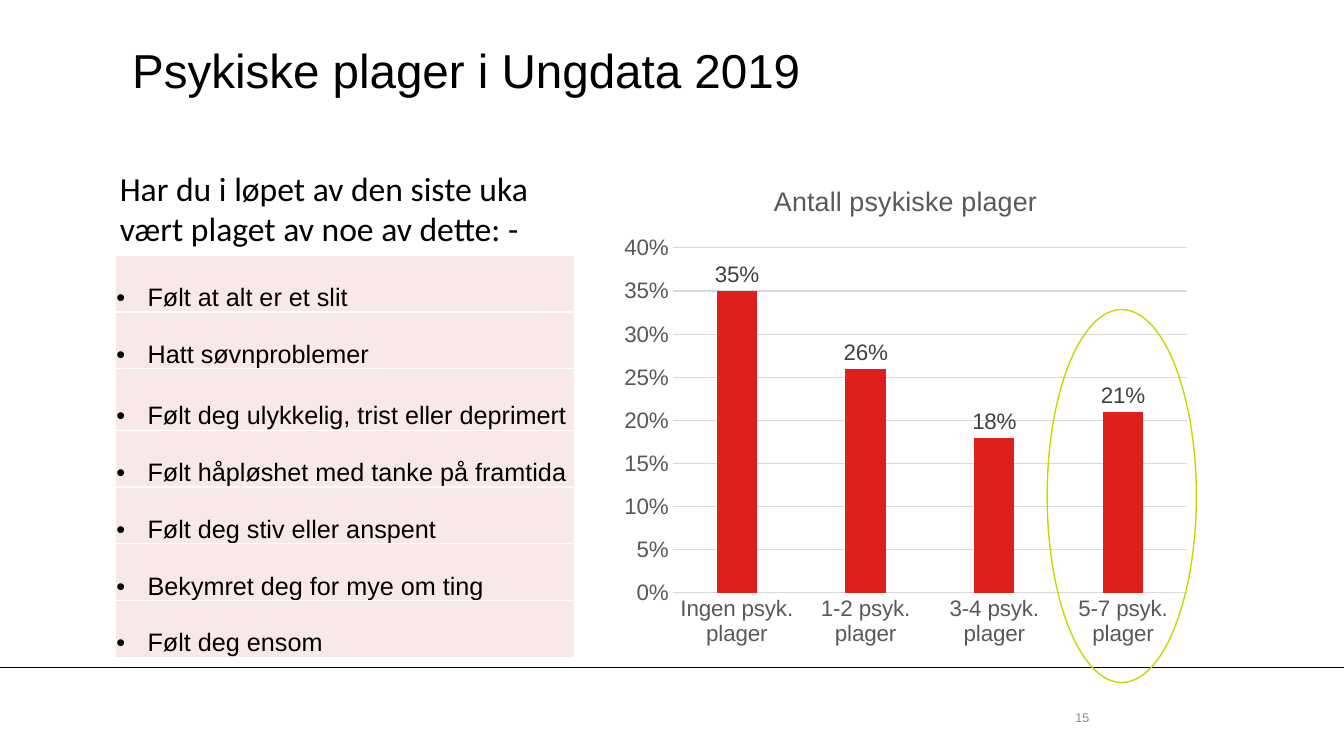
from dataclasses import dataclass

from lxml.etree import SubElement
from pptx import Presentation
from pptx.chart.data import CategoryChartData
from pptx.dml.color import RGBColor
from pptx.enum.chart import XL_CHART_TYPE as ChartType, XL_LABEL_POSITION as LabelPosition
from pptx.enum.chart import XL_TICK_MARK as TickMark
from pptx.enum.shapes import MSO_CONNECTOR as Connector, MSO_SHAPE as Shape
from pptx.enum.text import MSO_ANCHOR as Anchor
from pptx.oxml.ns import qn
from pptx.util import Cm, Pt


@dataclass(frozen=True)
class Theme:
    black: str = "000000"
    white: str = "FFFFFF"
    red: str = "DF1F1D"
    pink: str = "F9E8E8"
    lime: str = "CDD500"
    axis_text: str = "595959"
    label_text: str = "404040"
    grid: str = "D9D9D9"
    page_number: str = "8C8C8C"
    font: str = "Arial"
    question_font: str = "Calibri"
    title_size: float = 34
    question_size: float = 24
    list_size: float = 18
    chart_title_size: float = 19.2
    chart_size: float = 16
    page_number_size: float = 9


theme = Theme()


def style_font(font, size, color, name=theme.font):
    font.size = Pt(size)
    font.name = name
    font.bold = False
    font.color.rgb = RGBColor.from_string(color)


def add_text(box, text, size, color, name=theme.font, margins=None):
    """Add a wrapping text box; margins is (horizontal, vertical) in cm."""
    frame = slide.shapes.add_textbox(*map(Cm, box)).text_frame
    frame.word_wrap = True
    if margins:
        frame.margin_left = frame.margin_right = Cm(margins[0])
        frame.margin_top = frame.margin_bottom = Cm(margins[1])
        frame.vertical_anchor = Anchor.MIDDLE
    run = frame.paragraphs[0].add_run()
    run.text = text
    style_font(run.font, size, color, name)


presentation = Presentation()
presentation.slide_width, presentation.slide_height = Cm(33.87), Cm(19.05)
slide = presentation.slides.add_slide(presentation.slide_layouts[6])

# Footer rule, title, page number and question
footer_rule = slide.shapes.add_connector(Connector.STRAIGHT, 0, Cm(16.81), Cm(33.87), Cm(16.81))
footer_rule.line.color.rgb = RGBColor.from_string(theme.black)
footer_rule.line.width = Pt(0.75)
SubElement(footer_rule.element.spPr, qn("a:effectLst"))

add_text((3.33, 0.81, 28.19, 1.9), "Psykiske plager i Ungdata 2019",
         theme.title_size, theme.black, margins=(0, 0))
add_text((27.1, 17.58, 1.7, 1.02), "15", theme.page_number_size, theme.page_number, margins=(0, 0))
add_text((2.77, 4.11, 11.25, 2.31), "Har du i løpet av den siste uka vært plaget av noe av dette: -",
         theme.question_size, theme.black, theme.question_font)

# Table of complaints
complaints = [
    "Følt at alt er et slit",
    "Hatt søvnproblemer",
    "Følt deg ulykkelig, trist eller deprimert",
    "Følt håpløshet med tanke på framtida",
    "Følt deg stiv eller anspent",
    "Bekymret deg for mye om ting",
    "Følt deg ensom",
]
TALL_ROW = 2
table = slide.shapes.add_table(len(complaints), 1, Cm(2.9), Cm(6.43), Cm(11.58), Cm(10.11)).table
table.first_row = table.horz_banding = False
for index, complaint in enumerate(complaints):
    table.rows[index].height = Cm(1.55 if index == TALL_ROW else 1.43)
    cell = table.cell(index, 0)
    cell.margin_left = cell.margin_right = cell.margin_top = Cm(0.03)
    cell.margin_bottom = 0
    cell.vertical_anchor = Anchor.BOTTOM
    cell_properties = cell._tc.get_or_add_tcPr()
    for side in ("lnL", "lnR", "lnT", "lnB"):
        border = SubElement(cell_properties, qn(f"a:{side}"), w=str(Pt(1)))
        SubElement(SubElement(border, qn("a:solidFill")), qn("a:srgbClr"), val=theme.white)
    cell.fill.solid()
    cell.fill.fore_color.rgb = RGBColor.from_string(theme.pink)

    paragraph = cell.text_frame.paragraphs[0]
    paragraph_properties = paragraph._p.get_or_add_pPr()
    paragraph_properties.set("marL", str(Cm(0.79)))
    paragraph_properties.set("indent", str(Cm(-0.79)))
    SubElement(paragraph_properties, qn("a:buFont"), typeface=theme.font)
    SubElement(paragraph_properties, qn("a:buChar"), char="•")
    run = paragraph.add_run()
    run.text = complaint
    style_font(run.font, theme.list_size, theme.black)

# Column chart
chart_data = CategoryChartData(number_format="0%")
chart_data.categories = ["Ingen psyk. plager", "1-2 psyk. plager", "3-4 psyk. plager", "5-7 psyk. plager"]
chart_data.add_series("Antall psykiske plager", [0.35, 0.26, 0.18, 0.21])
chart = slide.shapes.add_chart(ChartType.COLUMN_CLUSTERED, Cm(15.44), Cm(4.11),
                               Cm(14.78), Cm(12.4), chart_data).chart
style_font(chart.font, theme.chart_size, theme.black)
chart.has_legend = False
chart.has_title = True
title_run = chart.chart_title.text_frame.paragraphs[0].add_run()
title_run.text = "Antall psykiske plager"
style_font(title_run.font, theme.chart_title_size, theme.axis_text)
chart.chart_title.include_in_layout = False

category_axis, value_axis = chart.category_axis, chart.value_axis
for axis in (category_axis, value_axis):
    axis.major_tick_mark = axis.minor_tick_mark = TickMark.NONE
    style_font(axis.tick_labels.font, theme.chart_size, theme.axis_text)
value_axis.minimum_scale, value_axis.maximum_scale, value_axis.major_unit = 0, 0.4, 0.05
value_axis.tick_labels.number_format = "0%"
value_axis.tick_labels.number_format_is_linked = False
value_axis.format.line.fill.background()
for line in (category_axis.format.line, value_axis.major_gridlines.format.line):
    line.color.rgb = RGBColor.from_string(theme.grid)
    line.width = Pt(0.75)

plot = chart.plots[0]
plot.gap_width, plot.overlap, plot.vary_by_categories = 219, -27, False
columns = plot.series[0]
columns.format.fill.solid()
columns.format.fill.fore_color.rgb = RGBColor.from_string(theme.red)
labels = columns.data_labels
labels.show_value = True
labels.position = LabelPosition.OUTSIDE_END
labels.number_format, labels.number_format_is_linked = "0%", False
style_font(labels.font, theme.chart_size, theme.label_text)

# Ring around the last column
highlight = slide.shapes.add_shape(Shape.OVAL, Cm(26.39), Cm(7.8), Cm(3.76), Cm(9.4))
highlight.shadow.inherit = False
highlight.fill.background()
highlight.line.color.rgb = RGBColor.from_string(theme.lime)
highlight.line.width = Pt(1)

presentation.save("out.pptx")
